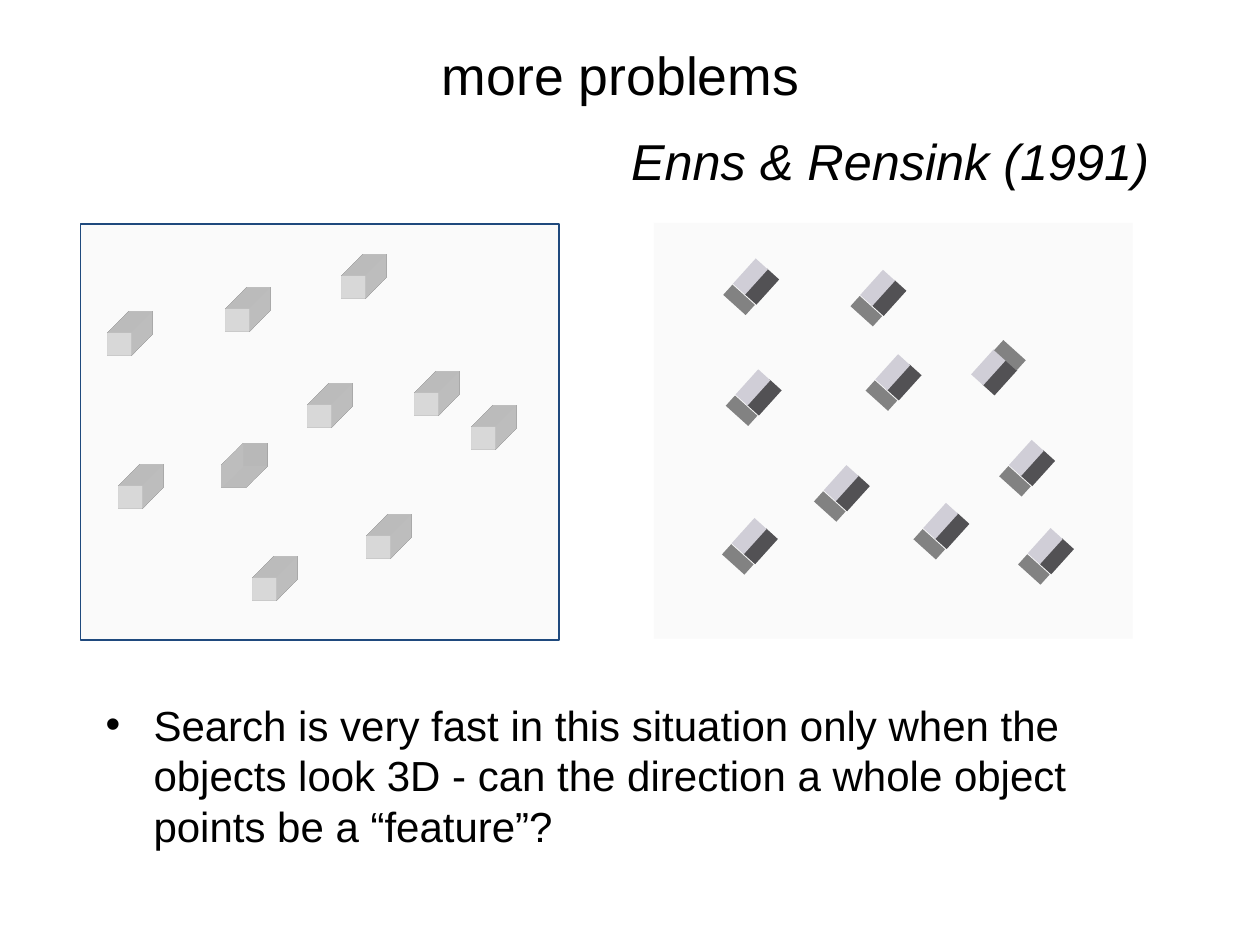
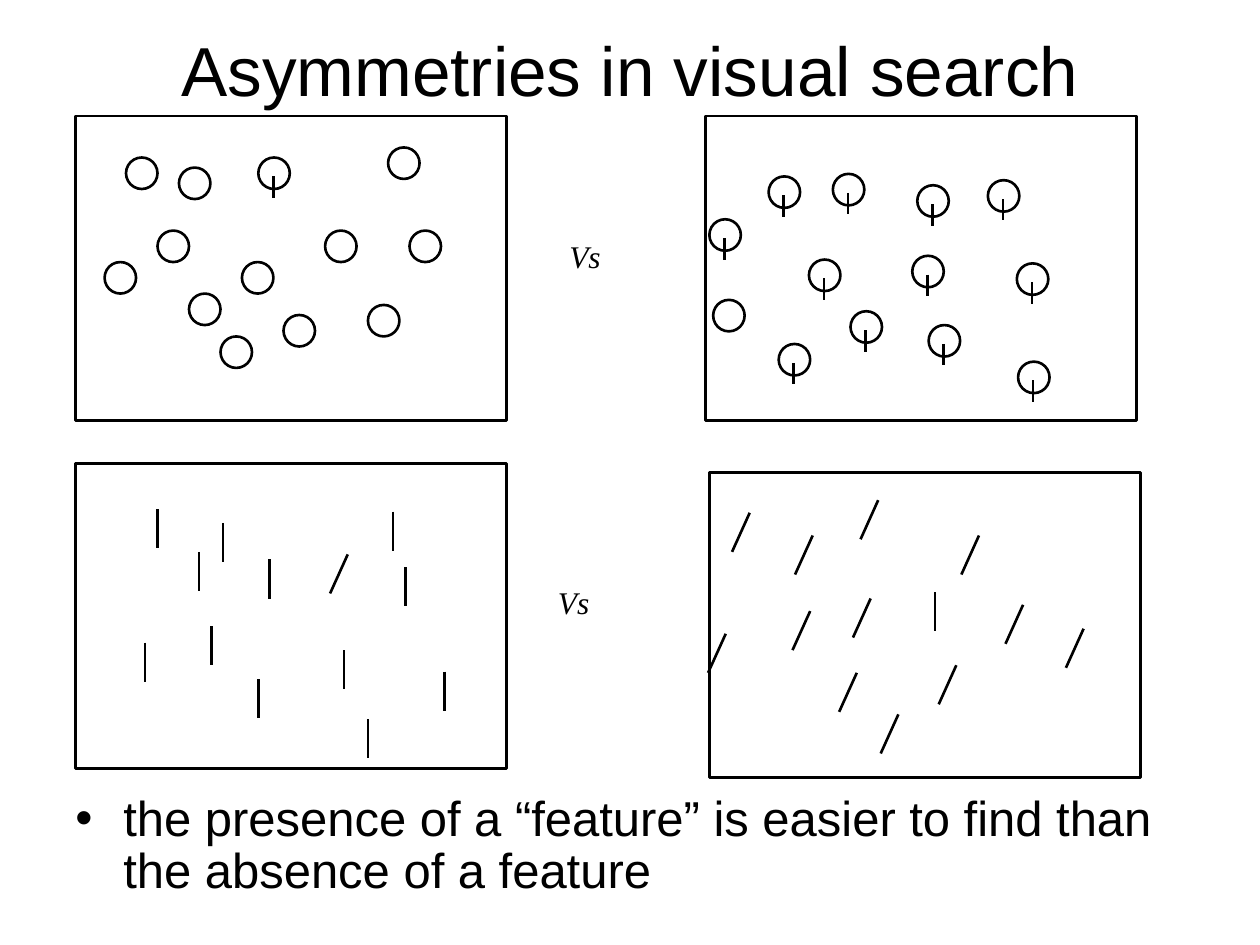
from dataclasses import dataclass

from pptx import Presentation
from pptx.dml.color import RGBColor
from pptx.enum.shapes import MSO_CONNECTOR as Connector, MSO_SHAPE as Shape
from pptx.enum.text import MSO_ANCHOR as Anchor, PP_ALIGN as Align
from pptx.oxml.ns import qn
from pptx.util import Inches, Pt
from lxml import etree


@dataclass(frozen=True)
class Theme:
    font: str = "Arial"
    serif: str = "Times New Roman"
    ink: str = "000000"
    paper: str = "FFFFFF"
    panel: str = "FAFAFA"
    frame: str = "1F497D"
    bar_dark: str = "525154"
    bar_light: str = "D0CED7"
    bar_end: str = "828282"
    title: float = 39.6
    small_title: float = 30.6
    citation: float = 28.8
    versus: float = 18
    stroke: float = 1.5


THEME = Theme()

# Upper left corner of each block's front face
BLOCKS = [(2.44, 3.21), (3.29, 3.12), (0.94, 3.86), (1.79, 2.45), (3.74, 3.39),
          (2, 4.59), (2.91, 4.25), (0.85, 2.64), (2.71, 2.19)]
ODD_BLOCK = (1.93, 3.52)
BLOCK_FRONT = (0.19, 0.18)
BLOCK_DEPTH = 0.48

# Position of each bar's dark strip
BARS = [(5.93, 3.09), (8.25, 4.35), (6.63, 3.85), (7.42, 4.15), (6.92, 2.3),
        (5.91, 2.21), (8.1, 3.65), (5.9, 4.27), (7.04, 2.97)]
ODD_BAR = (7.8, 2.93)
BAR_ANGLE = 132.1

PLAIN_RINGS = [(1, 1.25), (1.42, 1.33), (1.92, 2.08), (0.83, 2.08), (2.58, 1.83),
               (1.5, 2.33), (2.92, 2.42), (3.08, 1.17), (1.75, 2.67), (3.25, 1.83),
               (1.25, 1.83), (2.25, 2.5), (5.66, 2.38)]
TAILED_RINGS = [(2.05, 1.25), (6.1, 1.4), (6.61, 1.38), (5.63, 1.74), (7.28, 1.47),
                (6.75, 2.47), (7.24, 2.03), (7.84, 1.43), (6.42, 2.06), (8.07, 2.09),
                (7.37, 2.58), (8.08, 2.87), (6.18, 2.73)]
RING_SIZE = 0.25

# Upper end of each stick
UPRIGHT_STICKS = [(1.25, 4.04), (1.77, 4.15), (1.58, 4.38), (1.15, 5.1), (3.12, 4.06),
                  (1.68, 4.97), (2.14, 4.44), (2.05, 5.39), (3.53, 5.33), (2.73, 5.16),
                  (2.92, 5.71), (3.22, 4.5), (7.42, 4.7)]
SLANTED_STICKS = [(2.76, 4.4), (5.95, 4.07), (6.45, 4.25), (6.43, 4.85), (7.77, 4.25),
                  (8.6, 4.99), (7.59, 5.28), (8.12, 4.8), (6.8, 5.34), (6.97, 3.97),
                  (6.91, 4.75), (7.13, 5.67), (5.76, 5.03)]
STICK_HEIGHT, STICK_SLANT = 0.31, -0.14

PANEL_SIZE = (3.8, 3.3)
SEARCH_SIZE = (3.42, 2.42)
SEARCH_PANELS = [(0.6, 0.92), (5.63, 3.75), (0.6, 3.68), (5.6, 0.92)]


def rgb(color):
    return RGBColor.from_string(color)


def apply_format(target, **values):
    for name, value in values.items():
        setattr(target, name, value)


def add_figure(page, kind, at, size, fill, line=None, weight=THEME.stroke, angle=0):
    shape = page.shapes.add_shape(kind, *map(Inches, (*at, *size)))
    shape.rotation = angle
    shape.shadow.inherit = False
    shape.fill.solid()
    shape.fill.fore_color.rgb = rgb(fill)
    if line:
        shape.line.color.rgb = rgb(line)
        shape.line.width = Pt(weight)
    else:
        shape.line.fill.background()
    return shape


def add_stroke(page, start, shift):
    x, y = start
    dx, dy = shift
    line = page.shapes.add_connector(
        Connector.STRAIGHT, *map(Inches, (x, y, x + dx, y + dy)))
    line.line.color.rgb = rgb(THEME.ink)
    line.line.width = Pt(THEME.stroke)
    etree.SubElement(line._element.spPr, qn("a:effectLst"))


def add_span(para, text, points, font=THEME.font, italic=False):
    span = para.add_run()
    span.text = text
    apply_format(span.font, name=font, size=Pt(points), italic=italic)
    span.font.color.rgb = rgb(THEME.ink)


def add_frame(page, at, size, anchor=Anchor.TOP, wrap=True):
    box = page.shapes.add_textbox(*map(Inches, (*at, *size)))
    apply_format(box.text_frame, word_wrap=wrap, vertical_anchor=anchor)
    return box.text_frame


def add_title(page, text, at, size, points):
    frame = add_frame(page, at, size, Anchor.MIDDLE)
    para = frame.paragraphs[0]
    para.alignment = Align.CENTER
    add_span(para, text, points)
    return frame


def add_bullet(page, text, at, size, points, spacing=1.0):
    para = add_frame(page, at, size).paragraphs[0]
    add_span(para, text, points)
    apply_format(para, line_spacing=spacing, space_before=Pt(3))
    properties = para._p.get_or_add_pPr()
    properties.set("marL", str(Inches(0.38)))
    properties.set("indent", str(Inches(-0.38)))
    etree.SubElement(properties, qn("a:buFont")).set("typeface", THEME.font)
    etree.SubElement(properties, qn("a:buChar")).set("char", "•")


def add_block(page, at, direction="TopRight"):
    """Draw a square extruded towards the given corner, lit from the top left."""
    shape = add_figure(page, Shape.RECTANGLE, at, BLOCK_FRONT, THEME.panel)
    properties = shape._element.spPr
    scene = etree.SubElement(properties, qn("a:scene3d"))
    etree.SubElement(scene, qn("a:camera"), prst="legacyOblique" + direction)
    etree.SubElement(scene, qn("a:lightRig"), rig="legacyFlat3", dir="tl")
    solid = etree.SubElement(properties, qn("a:sp3d"), prstMaterial="legacyMatte",
                             extrusionH=str(Inches(BLOCK_DEPTH)))
    color = etree.SubElement(solid, qn("a:extrusionClr"))
    etree.SubElement(color, qn("a:srgbClr"), val=THEME.panel)


def add_bar(page, at, end_shift=(-0.1, 0.05)):
    strip = (0.27, 0.13)
    parts = [((0, 0), strip, THEME.bar_dark),
             ((-0.09, -0.08), strip, THEME.bar_light),
             (end_shift, (0.11, 0.24), THEME.bar_end)]
    for (dx, dy), size, fill in parts:
        add_figure(page, Shape.RECTANGLE, (at[0] + dx, at[1] + dy), size, fill,
                   angle=BAR_ANGLE)


def add_ring(page, at, tailed=False):
    add_figure(page, Shape.OVAL, at, (RING_SIZE, RING_SIZE), THEME.paper, THEME.ink)
    if tailed:
        add_stroke(page, (at[0] + 0.12, at[1] + 0.15), (0, 0.17))


def build_problems(page):
    frame = add_title(page, "more problems", (0.25, 0.21), (8.97, 1.42), THEME.small_title)
    frame.paragraphs[0]._p.get_or_add_pPr().set("marL", str(Inches(0.38)))
    citation = frame.add_paragraph()
    apply_format(citation, alignment=Align.RIGHT, space_before=Pt(13.8))
    add_span(citation, "Enns & Rensink (1991)", THEME.citation, italic=True)
    add_bullet(page, "Search is very fast in this situation only when the objects look 3D "
               "- can the direction a whole object points be a “feature”?",
               (0.74, 5.5), (8.75, 1.71), 24)
    add_figure(page, Shape.RECTANGLE, (0.64, 1.78), PANEL_SIZE, THEME.panel, THEME.frame, 1)
    add_block(page, ODD_BLOCK, "BottomLeft")
    for at in BLOCKS:
        add_block(page, at)
    add_figure(page, Shape.RECTANGLE, (5.19, 1.77), PANEL_SIZE, THEME.panel)
    for at in BARS:
        add_bar(page, at)
    add_bar(page, ODD_BAR, end_shift=(0.16, -0.23))


def build_asymmetries(page):
    add_title(page, "Asymmetries in visual search", (0.75, 0.17), (8.5, 0.75), THEME.title)
    add_bullet(page, "the presence of a “feature” is easier to find than "
               "the absence of a feature", (0.5, 6.25), (9.08, 1.03), 28, 0.9)
    for at in SEARCH_PANELS:
        add_figure(page, Shape.RECTANGLE, at, SEARCH_SIZE, THEME.paper, THEME.ink)
    for at in [(4.42, 1.83), (4.33, 4.58)]:
        versus = add_frame(page, at, (0.53, 0.5), wrap=False)
        add_span(versus.paragraphs[0], "Vs", THEME.versus, THEME.serif, italic=True)
    for at in PLAIN_RINGS:
        add_ring(page, at)
    for at in TAILED_RINGS:
        add_ring(page, at, tailed=True)
    for sticks, slant in [(UPRIGHT_STICKS, 0), (SLANTED_STICKS, STICK_SLANT)]:
        for top in sticks:
            add_stroke(page, top, (slant, STICK_HEIGHT))


def main():
    deck = Presentation()
    apply_format(deck, slide_width=Inches(10), slide_height=Inches(7.5))
    for build in (build_problems, build_asymmetries):
        build(deck.slides.add_slide(deck.slide_layouts[6]))
    deck.save("out.pptx")


if __name__ == "__main__":
    main()
